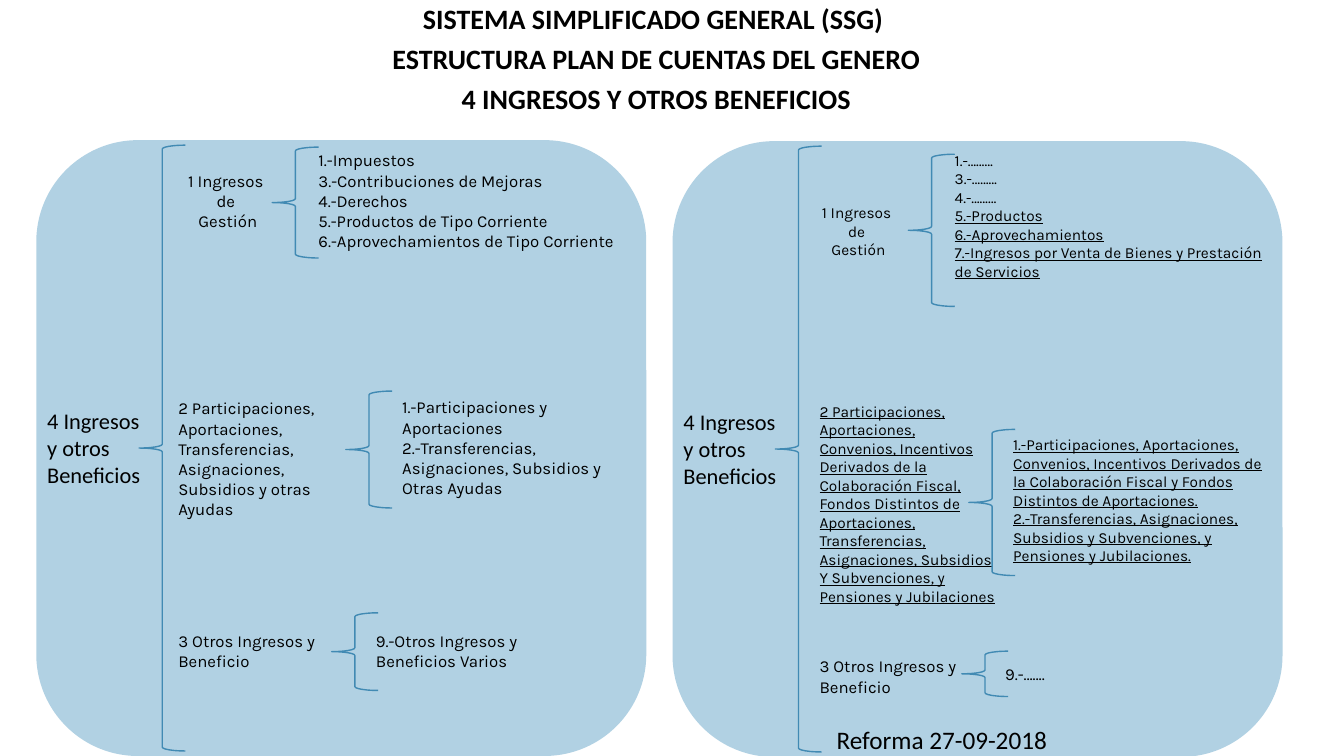
import pptx
import pptx.dml.color
import pptx.enum.shapes
import pptx.enum.text
import pptx.util

PX = 9144  # 100 px to the inch
PANEL_BLUE = pptx.dml.color.RGBColor(0xB1, 0xD1, 0xE3)
BRACE_BLUE = pptx.dml.color.RGBColor(0x41, 0x8A, 0xB3)
BLACK = pptx.dml.color.RGBColor(0, 0, 0)
LEFT = pptx.enum.text.PP_ALIGN.LEFT
CENTER = pptx.enum.text.PP_ALIGN.CENTER
SHAPE = pptx.enum.shapes.MSO_SHAPE

PAGE_SIZE = (1333, 750)
TITLE_AT = (289, 0, 724, 125)
TITLE = [
    "SISTEMA SIMPLIFICADO GENERAL (SSG) ",
    "ESTRUCTURA PLAN DE CUENTAS DEL GENERO",
    "4 INGRESOS Y OTROS BENEFICIOS",
]
REFORM_AT = (820, 714, 251, 40)
REFORM = ["Reforma 27-09-2018"]

# The panel frame, shared by both panels and measured from the panel corner
PANEL_SIZE = (605, 611)
MAIN_BRACE = (102, 5, 601)
ROOT_AT = (1, 260, 125, 91)
ROOT = ["4 Ingresos y otros Beneficios"]
BRACE_WIDTH = 46

MANAGEMENT = ["1 Ingresos ", "de ", "Gestión"]
OTHER = ["3 Otros Ingresos y", "Beneficio"]

# Labels: (left, top, width, height), size, alignment, first underlined line, lines
# Braces: (left, top, height)
NONE = 99
PANELS = [
    {
        "corner": (36, 139),
        "labels": [
            ((176, 164, 100, 71), 12, CENTER, NONE, MANAGEMENT),
            ((167, 390, 200, 111), 12, LEFT, NONE, [
                "2 Participaciones,", "Aportaciones,", "Transferencias,",
                "Asignaciones,", "Subsidios y otras Ayudas"]),
            ((167, 621, 159, 50), 12, LEFT, NONE, OTHER),
            ((306, 144, 335, 111), 12, LEFT, NONE, [
                "1.-Impuestos", "3.-Contribuciones de Mejoras", "4.-Derechos",
                "5.-Productos de Tipo Corriente",
                "6.-Aprovechamientos de Tipo Corriente"]),
            ((389, 389, 240, 111), 12, LEFT, NONE, [
                "1.-Participaciones y Aportaciones",
                "2.-Transferencias, Asignaciones, Subsidios y Otras Ayudas"]),
            ((363, 621, 174, 50), 12, LEFT, NONE,
             ["9.-Otros Ingresos y Beneficios Varios"]),
        ],
        "braces": [(270, 146, 110), (343, 388, 116), (329, 608, 77)],
    },
    {
        "corner": (667, 140),
        "labels": [
            ((805, 197, 93, 66), 11, CENTER, NONE, MANAGEMENT),
            ((803, 394, 195, 214), 11, LEFT, 0, [
                "2 Participaciones,", "Aportaciones,", "Convenios, Incentivos",
                "Derivados de la", "Colaboración Fiscal,", "Fondos Distintos de",
                "Aportaciones,", "Transferencias,", "Asignaciones, Subsidios",
                "Y Subvenciones, y", "Pensiones y Jubilaciones"]),
            ((803, 646, 159, 50), 12, LEFT, NONE, OTHER),
            ((937, 145, 335, 140), 11, LEFT, 3, [
                "1.-………", "3.-………", "4.-………", "5.-Productos",
                "6.-Aprovechamientos",
                "7.-Ingresos por Venta de Bienes y Prestación de Servicios"]),
            ((995, 427, 270, 140), 11, LEFT, 0, [
                "1.-Participaciones, Aportaciones, Convenios, Incentivos Derivados "
                "de la Colaboración Fiscal y Fondos Distintos de Aportaciones.",
                "2.-Transferencias, Asignaciones, Subsidios y Subvenciones, "
                "y Pensiones y Jubilaciones."]),
            ((987, 654, 84, 30), 12, LEFT, NONE, ["9.-……."]),
        ],
        "braces": [(901, 153, 151), (961, 426, 145), (954, 646, 45)],
    },
]


def emu(lengths):
    return [length * PX for length in lengths]


def add_text(shapes, at, lines, font, size, align=LEFT, underline_from=NONE):
    box = shapes.add_textbox(*emu(at))
    frame = box.text_frame
    frame.word_wrap = True
    frame.auto_size = pptx.enum.text.MSO_AUTO_SIZE.SHAPE_TO_FIT_TEXT
    frame.text = "\n".join(lines)
    for index, para in enumerate(frame.paragraphs):
        para.alignment = align
        for span in para.runs:
            span.font.name = font
            span.font.size = pptx.util.Pt(size)
            span.font.color.rgb = BLACK
            if index >= underline_from:
                span.font.underline = True
    return frame


def add_brace(shapes, left, top, height):
    brace = shapes.add_shape(
        SHAPE.LEFT_BRACE, *emu((left, top, BRACE_WIDTH, height)))
    brace.shadow.inherit = False
    brace.fill.background()
    brace.line.color.rgb = BRACE_BLUE
    brace.line.width = pptx.util.Pt(1)


def add_panel(page, panel):
    shapes = page.shapes.add_group_shape().shapes
    x, y = panel["corner"]
    back = shapes.add_shape(SHAPE.ROUNDED_RECTANGLE, *emu((x, y, *PANEL_SIZE)))
    back.shadow.inherit = False
    back.fill.solid()
    back.fill.fore_color.rgb = PANEL_BLUE
    back.line.fill.background()

    left, top, height = MAIN_BRACE
    add_brace(shapes, x + left, y + top, height)
    for at, size, align, underline_from, lines in panel["labels"]:
        add_text(shapes, at, lines, "Karla", size, align, underline_from)
    left, top, width, height = ROOT_AT
    add_text(shapes, (x + left, y + top, width, height), ROOT, "Calibri", 16)
    for brace in panel["braces"]:
        add_brace(shapes, *brace)


def main():
    deck = pptx.Presentation()
    deck.slide_width, deck.slide_height = emu(PAGE_SIZE)
    page = deck.slides.add_slide(deck.slide_layouts[6])

    title = add_text(page.shapes, TITLE_AT, TITLE, "Calibri", 20, CENTER)
    for para in title.paragraphs:
        para.line_spacing = 0.9
        para.space_after = pptx.util.Pt(7)
        para.runs[0].font.bold = True

    for panel in PANELS:
        add_panel(page, panel)
    add_text(page.shapes, REFORM_AT, REFORM, "Calibri", 18)
    deck.save("out.pptx")


if __name__ == "__main__":
    main()
